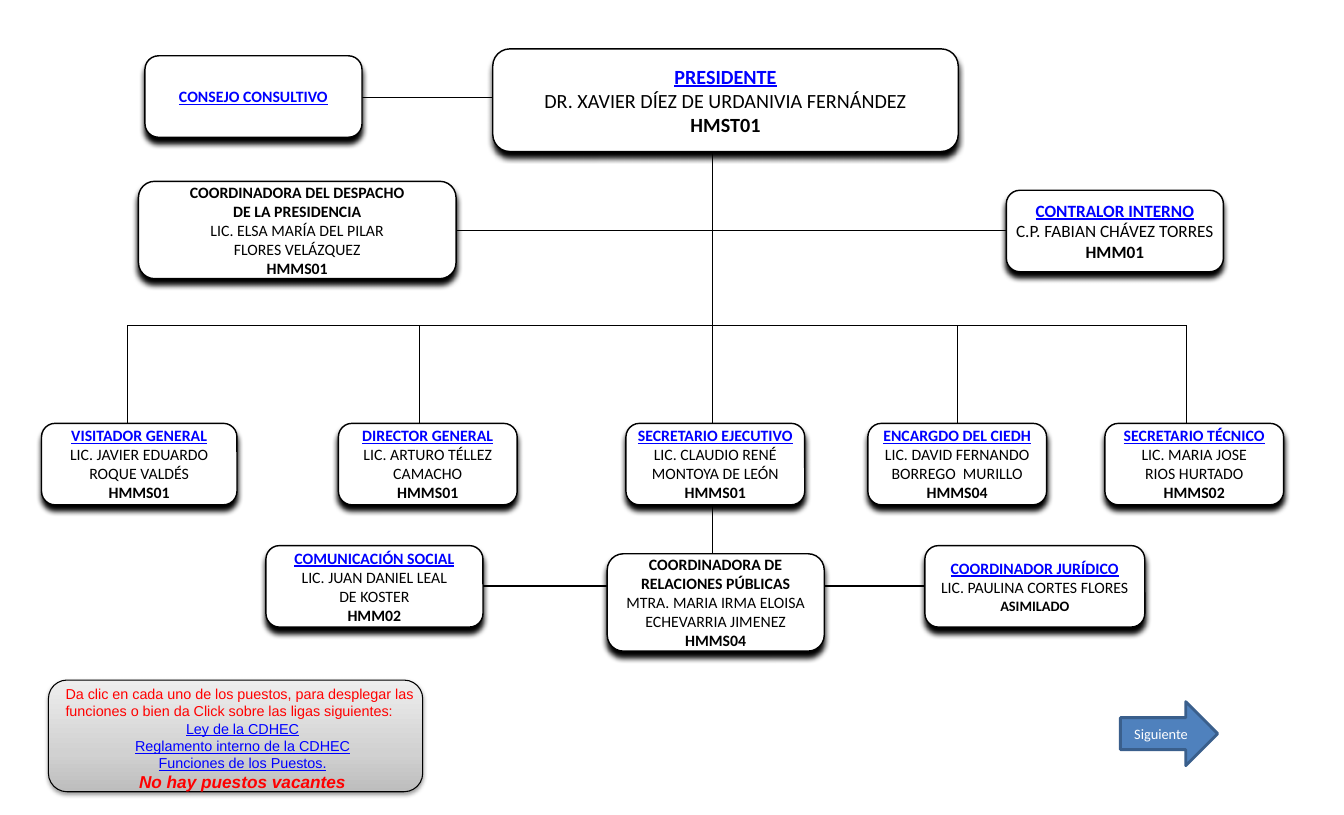
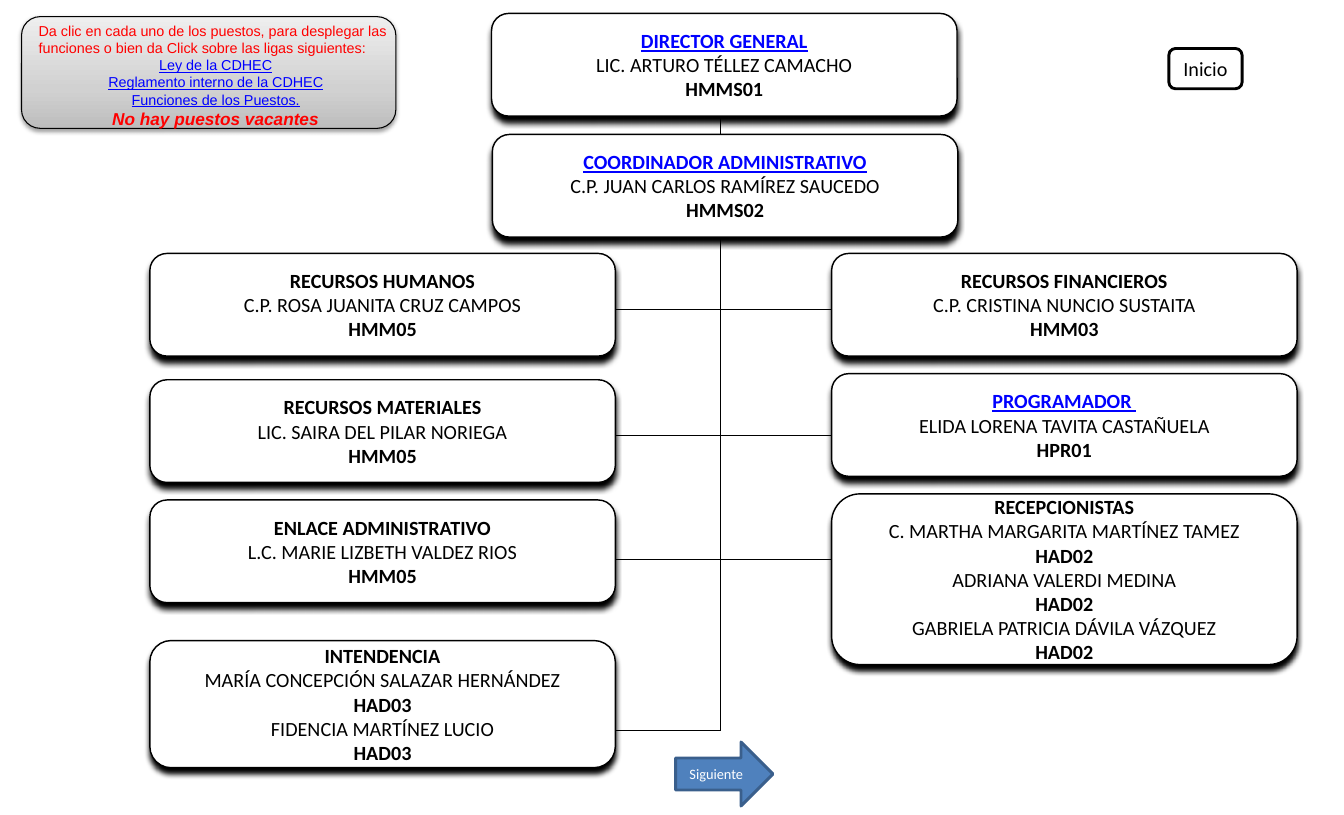
from dataclasses import dataclass

from pptx import Presentation
from pptx.dml.color import RGBColor as RGB
from pptx.enum.shapes import MSO_CONNECTOR as CONN, MSO_SHAPE as SHAPE
from pptx.enum.text import MSO_ANCHOR as ANCHOR, PP_ALIGN as ALIGN
from pptx.oxml import parse_xml
from pptx.oxml.ns import nsdecls, qn
from pptx.util import Cm, Pt


@dataclass(frozen=True)
class Theme:
    font: str = "Calibri"
    note_font: str = "Arial"
    ink: str = "000000"
    paper: str = "FFFFFF"
    link: str = "0000FF"
    alert: str = "FF0000"
    arrow: str = "4F81BD"
    arrow_edge: str = "3A5F8C"
    note_stops: tuple = ((0, "BDBDBD"), (35, "D1D1D1"), (100, "EEEEEE"))
    tiny: int = 10
    small: int = 11
    medium: int = 12
    large: int = 14
    hairline: float = 0.75
    border: float = 1
    heavy: float = 2


T = Theme()
WIDE, HIGH = 11.43, 2.52
SIDE, LOW, TALL = 5.33, 2, 2.39


def style(p, text, size, color=T.ink, font=T.font, bold=False, italic=False,
          underline=False, align=ALIGN.CENTER):
    p.text = text
    p.alignment = align
    f = p.font
    f.name, f.size, f.color.rgb = font, Pt(size), RGB.from_string(color)
    f.bold, f.italic, f.underline = bold, italic, underline


def write(tf, rows):
    for i, (text, options) in enumerate(rows):
        p = tf.add_paragraph() if i else tf.paragraphs[0]
        style(p, text, **options)


def add_shadow(sp, alpha, blur, dist):
    effects = sp._element.spPr.find(qn("a:effectLst"))
    effects.append(parse_xml(
        f'<a:outerShdw {nsdecls("a")} blurRad="{Pt(blur)}" dist="{Pt(dist)}" '
        f'dir="5400000" rotWithShape="0"><a:srgbClr val="{T.ink}">'
        f'<a:alpha val="{alpha * 1000}"/></a:srgbClr></a:outerShdw>'))


def add_box(s, kind, x, y, w, h, fill=T.paper, line=T.ink, weight=T.border):
    sp = s.shapes.add_shape(kind, Cm(x), Cm(y), Cm(w), Cm(h))
    sp.shadow.inherit = False
    sp.fill.solid()
    sp.fill.fore_color.rgb = RGB.from_string(fill)
    sp.line.color.rgb = RGB.from_string(line)
    sp.line.width = Pt(weight)
    sp.text_frame.vertical_anchor = ANCHOR.MIDDLE
    return sp


def add_line(s, x1, y1, x2, y2):
    c = s.shapes.add_connector(CONN.STRAIGHT, Cm(x1), Cm(y1), Cm(x2), Cm(y2))
    c.line.color.rgb = RGB.from_string(T.ink)
    c.line.width = Pt(T.hairline)
    c._element.spPr.append(parse_xml(f'<a:effectLst {nsdecls("a")}/>'))


def add_post(s, x, y, w, h, titles, *holders, linked=False, size=T.small,
             code_size=None):
    sp = add_box(s, SHAPE.ROUNDED_RECTANGLE, x, y, w, h)
    add_shadow(sp, 100, 4, 4)
    tf = sp.text_frame
    tf.word_wrap = False
    tf.margin_left = tf.margin_right = Cm(0.43)
    tf.margin_top = tf.margin_bottom = Cm(0.23)
    heading = dict(size=size, bold=True, underline=linked,
                   color=T.link if linked else T.ink)
    rows = [(title, heading) for title in titles]
    for *names, code in holders:
        rows += [(name, dict(size=size)) for name in names]
        rows.append((code, dict(size=code_size or size, bold=True)))
    write(tf, rows)


def add_note(s, x, y):
    w, h = 9.19, 2.74
    sp = add_box(s, SHAPE.ROUNDED_RECTANGLE, x, y, w, h, weight=T.hairline)
    stops = "".join(f'<a:gs pos="{pos * 1000}"><a:srgbClr val="{color}"/></a:gs>'
                    for pos, color in T.note_stops)
    spPr = sp._element.spPr
    spPr.replace(spPr.find(qn("a:solidFill")), parse_xml(
        f'<a:gradFill {nsdecls("a")} rotWithShape="1"><a:gsLst>{stops}</a:gsLst>'
        '<a:lin ang="16200000" scaled="0"/></a:gradFill>'))
    add_shadow(sp, 38, 3.1, 1.6)

    tf = s.shapes.add_textbox(Cm(x + 0.17), Cm(y), Cm(w), Cm(2.9)).text_frame
    tf.word_wrap = True
    plain = dict(size=T.tiny, font=T.note_font)
    link = dict(plain, color=T.link, underline=True)
    write(tf, [
        ("Da clic en cada uno de los puestos, para desplegar las funciones "
         "o bien da Click sobre las ligas siguientes:",
         dict(plain, color=T.alert, align=ALIGN.LEFT)),
        ("Ley de la CDHEC", link),
        ("Reglamento interno de la CDHEC", link),
        ("Funciones de los Puestos.", link),
        ("No hay puestos vacantes",
         dict(size=T.medium, font=T.note_font, color=T.alert, bold=True,
              italic=True)),
    ])


def add_next(s, x, y):
    sp = add_box(s, SHAPE.RIGHT_ARROW, x, y, 2.39, 1.57, T.arrow, T.arrow_edge,
                 T.heavy)
    style(sp.text_frame.paragraphs[0], "Siguiente", T.tiny, T.paper)


def add_home(s, x, y):
    sp = add_box(s, SHAPE.ROUNDED_RECTANGLE, x, y, 1.8, 0.99, weight=T.heavy)
    style(sp.text_frame.paragraphs[0], "Inicio", T.large)


def build_presidency(s):
    trunk, bus, row, staff = 17.5, 7.98, 10.39, 14.38
    drops = (3.12, 10.31, trunk, 23.52, 29.13)
    add_line(s, trunk, 3.3, trunk, staff)
    add_line(s, drops[0], bus, drops[-1], bus)
    for x in drops:
        if x != trunk:
            add_line(s, x, bus, x, row + 1)
    for x1, x2, y in ((8.9, 12.1, 2.39), (9.98, 25.91, 5.66),
                      (9.53, 22.71, staff)):
        add_line(s, x1, y, x2, y)

    add_post(s, 12.1, 1.2, WIDE, HIGH, ["PRESIDENTE"],
             ("DR. XAVIER DÍEZ DE URDANIVIA FERNÁNDEZ", "HMST01"),
             linked=True, size=T.large)
    add_post(s, 3.56, 1.37, SIDE, LOW, ["CONSEJO CONSULTIVO"], linked=True)
    add_post(s, 3.4, 4.45, 7.8, TALL,
             ["COORDINADORA DEL DESPACHO", "DE LA PRESIDENCIA"],
             ("LIC. ELSA MARÍA DEL PILAR", "FLORES VELÁZQUEZ", "HMMS01"))
    add_post(s, 24.71, 4.67, SIDE, LOW, ["CONTRALOR INTERNO"],
             ("C.P. FABIAN CHÁVEZ TORRES", "HMM01"),
             linked=True, size=T.medium)

    for x, w, title, *holder in (
            (1.02, 4.8, "VISITADOR GENERAL",
             "LIC. JAVIER EDUARDO", "ROQUE VALDÉS", "HMMS01"),
            (8.31, 4.39, "DIRECTOR GENERAL",
             "LIC. ARTURO TÉLLEZ", "CAMACHO", "HMMS01"),
            (15.37, 4.39, "SECRETARIO EJECUTIVO",
             "LIC. CLAUDIO RENÉ", "MONTOYA DE LEÓN", "HMMS01"),
            (21.31, 4.39, "ENCARGDO DEL CIEDH",
             "LIC. DAVID FERNANDO", "BORREGO  MURILLO", "HMMS04"),
            (27.13, 4.39, "SECRETARIO TÉCNICO",
             "LIC. MARIA JOSE", "RIOS HURTADO", "HMMS02")):
        add_post(s, x, row, w, LOW, [title], holder, linked=True)

    add_post(s, 6.53, 13.39, SIDE, LOW, ["COMUNICACIÓN SOCIAL"],
             ("LIC. JUAN DANIEL LEAL", "DE KOSTER", "HMM02"), linked=True)
    add_post(s, 14.91, 13.59, SIDE, TALL,
             ["COORDINADORA DE", "RELACIONES PÚBLICAS"],
             ("MTRA. MARIA IRMA ELOISA", "ECHEVARRIA JIMENEZ", "HMMS04"))
    add_post(s, 22.71, 13.39, 5.4, LOW, ["COORDINADOR JURÍDICO"],
             ("LIC. PAULINA CORTES FLORES", "ASIMILADO"),
             linked=True, code_size=T.tiny)
    add_note(s, 1.19, 16.69)
    add_next(s, 27.51, 17.22)


def build_administration(s):
    trunk, foot, left, right = 17.7, 17.93, 3.68, 20.42
    add_line(s, trunk, 2.84, trunk, foot)
    add_line(s, 14.58, foot, trunk, foot)
    for y in (7.59, 10.69, 13.72):
        add_line(s, 14.71, y, 20.55, y)

    for x, y, h, linked, title, *holders in (
            (12.07, 0.33, HIGH, True, "DIRECTOR GENERAL",
             ("LIC. ARTURO TÉLLEZ CAMACHO", "HMMS01")),
            (12.09, 3.3, HIGH, True, "COORDINADOR ADMINISTRATIVO",
             ("C.P. JUAN CARLOS RAMÍREZ SAUCEDO", "HMMS02")),
            (left, 6.22, HIGH, False, "RECURSOS HUMANOS",
             ("C.P. ROSA JUANITA CRUZ CAMPOS", "HMM05")),
            (left, 9.32, HIGH, False, "RECURSOS MATERIALES",
             ("LIC. SAIRA DEL PILAR NORIEGA", "HMM05")),
            (left, 12.27, HIGH, False, "ENLACE ADMINISTRATIVO",
             ("L.C. MARIE LIZBETH VALDEZ RIOS", "HMM05")),
            (left, 15.72, 3.12, False, "INTENDENCIA",
             ("MARÍA CONCEPCIÓN SALAZAR HERNÁNDEZ", "HAD03"),
             ("FIDENCIA MARTÍNEZ LUCIO", "HAD03")),
            (right, 6.22, HIGH, False, "RECURSOS FINANCIEROS",
             ("C.P. CRISTINA NUNCIO SUSTAITA", "HMM03")),
            (right, 9.17, HIGH, True, "PROGRAMADOR ",
             ("ELIDA LORENA TAVITA CASTAÑUELA", "HPR01")),
            (right, 12.12, 4.19, False, "RECEPCIONISTAS",
             ("C. MARTHA MARGARITA MARTÍNEZ TAMEZ", "HAD02"),
             ("ADRIANA VALERDI MEDINA", "HAD02"),
             ("GABRIELA PATRICIA DÁVILA VÁZQUEZ", "HAD02"))):
        add_post(s, x, y, WIDE, h, [title], *holders, linked=linked,
                 size=T.large)

    add_home(s, 28.7, 1.19)
    add_note(s, 0.53, 0.41)
    add_next(s, 16.59, 18.21)


def main():
    prs = Presentation()
    prs.slide_width, prs.slide_height = Cm(33), Cm(20)
    blank = prs.slide_layouts.get_by_name("Blank")
    for build in (build_presidency, build_administration):
        build(prs.slides.add_slide(blank))
    prs.save("out.pptx")


if __name__ == "__main__":
    main()
